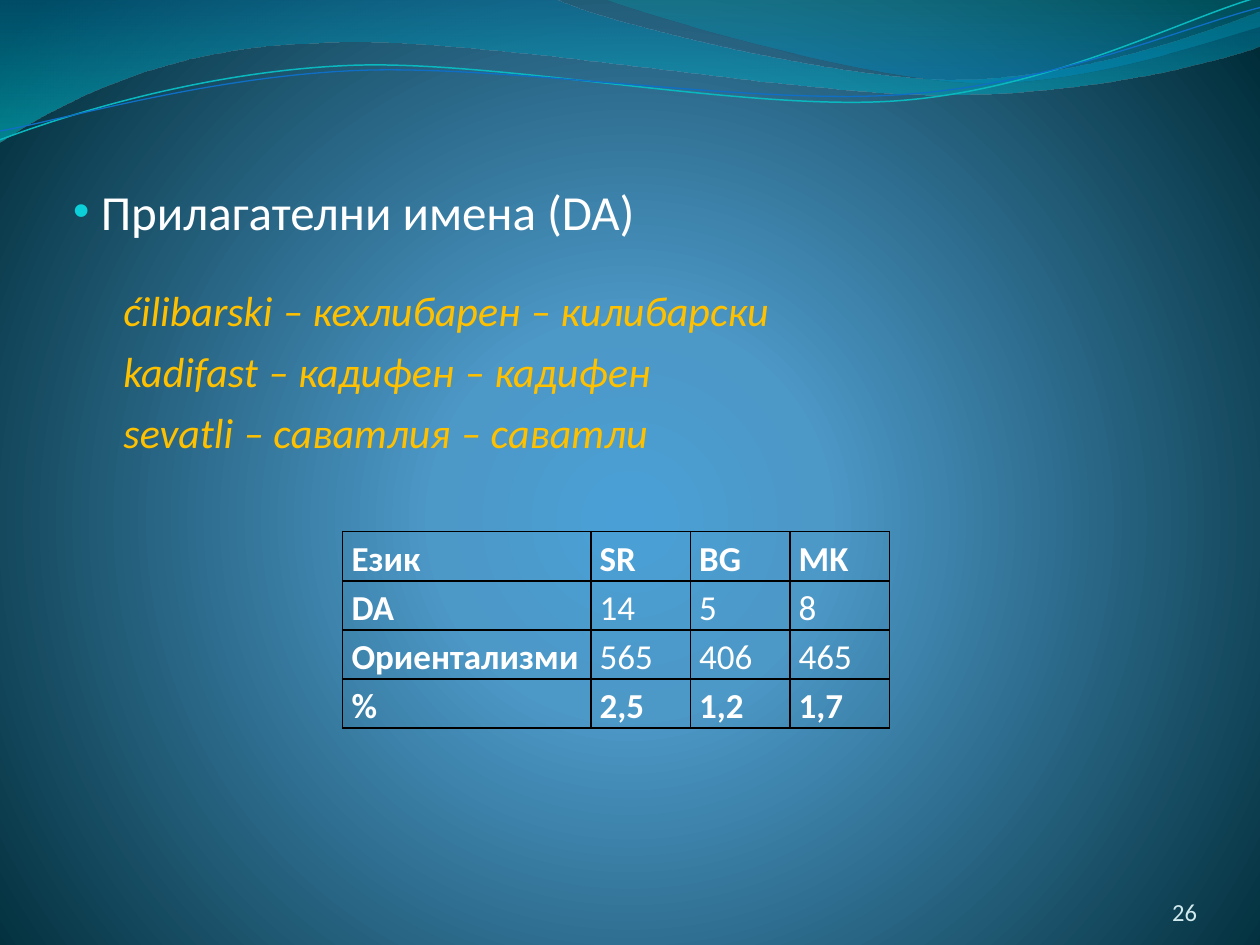
from lxml.etree import SubElement as Sub
from pptx import Presentation
from pptx.dml.color import RGBColor as RGB
from pptx.enum.text import MSO_ANCHOR as Anchor, PP_ALIGN as Align
from pptx.oxml.ns import qn
from pptx.util import Inches, Pt

INK = {"white": "FFFFFF", "gold": "FFC000", "pale": "D1EAEE", "dot": "0BD0D9",
       "line": "000000", "glow": "4AA0D6", "mid": "4C98C7", "edge": "002C38",
       "sea": "0074A1", "teal": "00C6CF", "green": "00A1A9", "blue": "008BBF",
       "aqua": "0AB8BF", "navy": "0F6FC6"}
FONT = "Calibri"

# The slide is a grid of 10 columns by 7.5 rows with square cells.
deck = Presentation()
deck.slide_width, deck.slide_height = Inches(10), Inches(7.5)
cell = deck.slide_width / 10
slide = deck.slides.add_slide(deck.slide_layouts[6])


def blend(host, fill, stops):
    """Give fill a gradient of (percent, colour, opacity) stops; return its element."""
    fill.gradient()
    grad = next(host.iter(qn("a:gradFill")))
    for kid in list(grad):
        grad.remove(kid)
    group = Sub(grad, qn("a:gsLst"))
    for pos, name, alpha in stops:
        stop = Sub(group, qn("a:gs"), pos=str(pos * 1000))
        tint = Sub(stop, qn("a:srgbClr"), val=INK[name])
        if alpha < 100:
            Sub(tint, qn("a:alpha"), val=str(alpha * 1000))
    return grad


def style(run, size, name, **form):
    for key, val in {"name": FONT, "size": Pt(size), **form}.items():
        setattr(run.font, key, val)
    run.font.color.rgb = RGB.from_string(INK[name])


# Background
grad = blend(slide._element, slide.background.fill,
             [(0, "glow", 100), (25, "mid", 100), (100, "edge", 100)])
ring = Sub(grad, qn("a:path"), {"path": "circle"})
Sub(ring, qn("a:fillToRect"), l="10000", t="110000", r="10000", b="100000")

# Waves: each step is a line end (2 numbers) or a Bezier curve (6 numbers)
waves = [
    ([(0, 0), (4.4, -0.01), (4.76, 0.17, 6.64, 0.63, 7.58, 0.63),
      (8.53, 0.63, 9.58, 0.26, 10, 0.09), (10.01, 0.36),
      (9.83, 0.44, 8.7, 0.76, 7.46, 0.75), (6.22, 0.75, 3.82, 0.28, 2.57, 0.34),
      (1.29, 0.36, 0.46, 0.83, -0.01, 1.13)],
     [(0, "sea", 45), (100, "teal", 55)], None),
    ([(4.79, -0.01), (5.09, 0.11, 6.82, 0.62, 7.69, 0.65),
      (8.56, 0.69, 9.61, 0.32, 10, 0.21), (10, 0)],
     [(0, "green", 30), (80, "blue", 45)], None),
    ([(0, 1.11), (0.48, 0.93, 1.58, 0.57, 2.77, 0.52),
      (3.95, 0.47, 5.93, 0.89, 7.13, 0.8), (8.33, 0.71, 9.38, 0.15, 9.98, -0.02)],
     None, ("aqua", 0.85)),
    ([(0, 1.04), (0.47, 0.96, 1.64, 0.61, 2.83, 0.56),
      (4.03, 0.51, 5.97, 0.84, 7.17, 0.75), (8.36, 0.67, 9.41, 0.21, 10, 0.06)],
     None, ("navy", 0.75)),
]
for steps, stops, pen in waves:
    # The builder takes whole numbers, so points are in hundredths of a cell.
    dots = [(round(step[i] * 100), round(step[i + 1] * 100))
            for step in steps for i in range(0, len(step), 2)]
    form = slide.shapes.build_freeform(*dots[0], scale=cell / 100)
    form.add_line_segments(dots[1:], close=bool(stops))
    wave = form.convert_to_shape()
    wave.shadow.inherit = False

    # Join each three control points into one curve
    legs = iter(list(wave._element.iter(qn("a:lnTo"))))
    for step in steps[1:]:
        leg = next(legs)
        if len(step) == 6:
            curve = leg.makeelement(qn("a:cubicBezTo"))
            leg.addprevious(curve)
            for part in (leg, next(legs), next(legs)):
                curve.append(part[0])
                part.getparent().remove(part)

    if stops:
        grad = blend(wave._element, wave.fill, stops)
        Sub(grad, qn("a:lin"), ang="5400000", scaled="0")
        wave.line.fill.background()
    else:
        wave.fill.background()
        wave.line.color.rgb = RGB.from_string(INK[pen[0]])
        wave.line.width = Pt(pen[1])

# Heading, examples and page number
boxes = [
    ((0.58, 1.39, 8.91, 5.67), (0, 0.05, 0.02, 0.05), Anchor.TOP, [
        ("Прилагателни имена (DA)", 28, "white", 5.6),
        ("ćilibarski ‒ кехлибарен ‒ килибарски", 24, "gold", 25.5),
        ("kadifast ‒ кадифен ‒ кадифен", 24, "gold", 6),
        ("sevatli ‒ саватлия ‒ саватли", 24, "gold", 6)]),
    ((8.67, 6.95, 0.83, 0.4), (0, 0, 0, 0), Anchor.BOTTOM,
     [("26", 14, "pale", 0)]),
]
for place, pads, anchor, lines in boxes:
    frame = slide.shapes.add_textbox(*(int(n * cell) for n in place)).text_frame
    frame.word_wrap, frame.vertical_anchor = True, anchor
    for side, pad in zip(("left", "top", "right", "bottom"), pads):
        setattr(frame, "margin_" + side, int(pad * cell))
    for i, (text, size, name, gap) in enumerate(lines):
        para = frame.add_paragraph() if i else frame.paragraphs[0]
        para.space_before = Pt(gap)
        run = para.add_run()
        run.text = text
        style(run, size, name, italic=name == "gold")
        prop = para._p.get_or_add_pPr()
        if name == "pale":
            para.alignment = Align.RIGHT
        elif name == "gold":
            prop.set("marL", str(int(0.4 * cell)))
        else:
            hang = int(0.22 * cell)
            prop.set("marL", str(hang))
            prop.set("indent", str(-hang))
            Sub(Sub(prop, qn("a:buClr")), qn("a:srgbClr"), val=INK["dot"])
            Sub(prop, qn("a:buSzPct"), val="95000")
            Sub(prop, qn("a:buFont"), typeface="Arial")
            Sub(prop, qn("a:buChar"), char="•")

# Table of counts
data = [("Език", "SR", "BG", "MK"), ("DA", "14", "5", "8"),
        ("Ориентализми", "565", "406", "465"), ("%", "2,5", "1,2", "1,7")]
wide, slim, tall = 1.97, 0.79, 0.39
area = (2.72, 4.22, wide + 3 * slim, tall * len(data))
table = slide.shapes.add_table(len(data), 4, *(int(n * cell) for n in area)).table
table.first_row = table.horz_banding = False
for c, col in enumerate(table.columns):
    col.width = int((slim if c else wide) * cell)
for r, row in enumerate(data):
    table.rows[r].height = int(tall * cell)
    for c, text in enumerate(row):
        box = table.cell(r, c)
        box.margin_left = box.margin_right = int(0.07 * cell)
        box.margin_top = box.margin_bottom = 0
        para = box.text_frame.paragraphs[0]
        para.line_spacing = 1.15
        run = para.add_run()
        run.text = text
        style(run, 20, "white", bold=c == 0 or r in (0, 3))
        prop = box._tc.get_or_add_tcPr()
        for tag in ("a:lnL", "a:lnR", "a:lnT", "a:lnB"):
            edge = Sub(prop, qn(tag), w=str(Pt(1)))
            Sub(Sub(edge, qn("a:solidFill")), qn("a:srgbClr"), val=INK["line"])
        box.fill.background()

deck.save("out.pptx")
